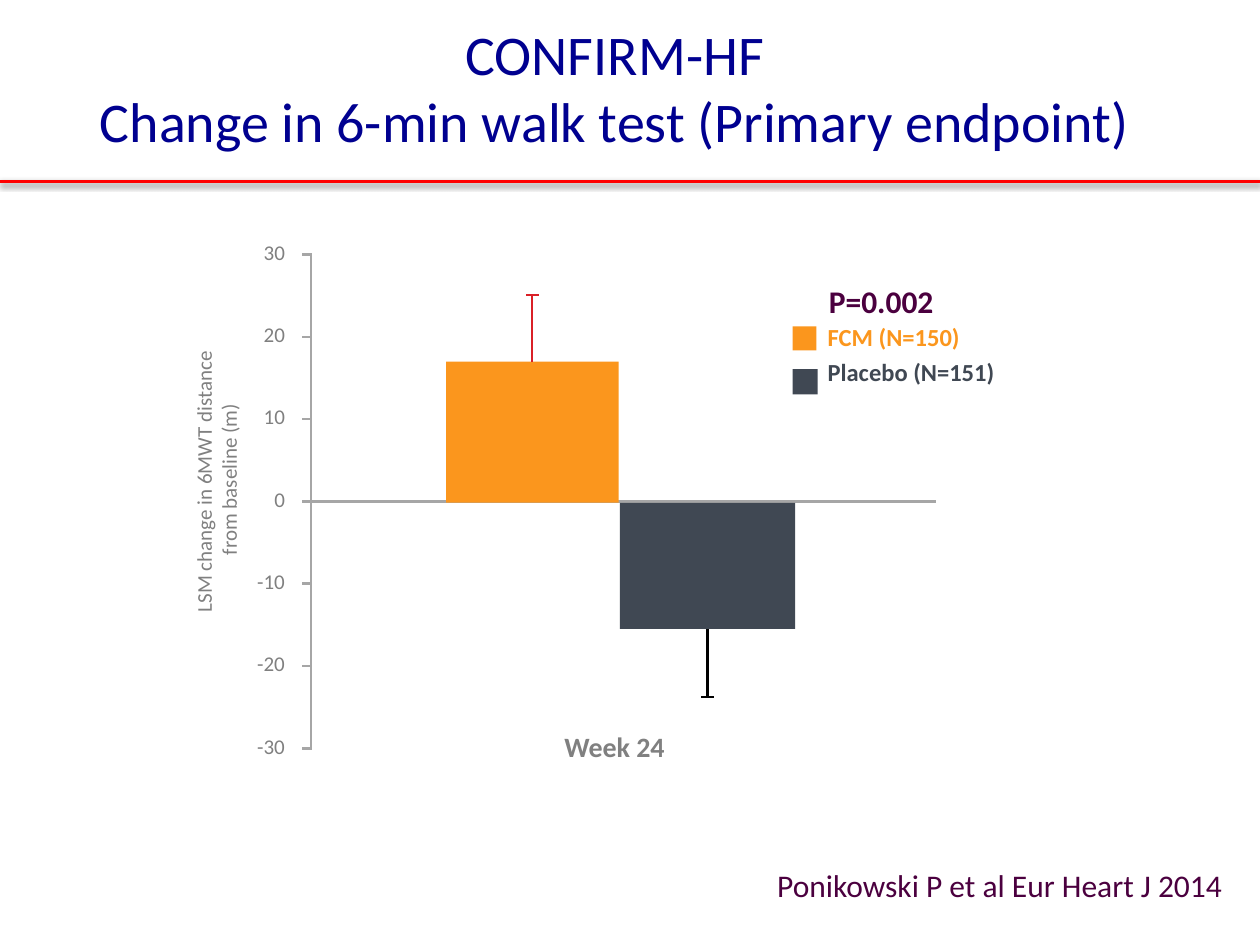
from lxml.etree import SubElement
from pptx import Presentation
from pptx.dml.color import RGBColor
from pptx.enum.shapes import MSO_CONNECTOR as CONNECTOR, MSO_SHAPE as SHAPE
from pptx.enum.text import MSO_ANCHOR as ANCHOR, PP_ALIGN as ALIGN
from pptx.oxml.ns import qn
from pptx.util import Inches, Pt

TITLE = "CONFIRM-HF\vChange in 6-min walk test (Primary endpoint)"
CITATION = " Ponikowski P et al Eur Heart J 2014"
AXIS_TITLE = "LSM change in 6MWT distance\n from baseline (m)"
LEGEND = "FCM (N=150)\nPlacebo (N=151)"
ORANGE, SLATE, GREY, AXIS, PLUM = "FB961D", "404853", "808080", "A6A6A6", "4B003F"
BARS = [
    {"left": 4.92, "width": 1.39, "value": -15.5, "error": -23.8, "fill": SLATE, "line": "000000"},
    {"left": 3.54, "width": 1.37, "value": 17, "error": 25.1, "fill": ORANGE, "line": "DA2027"},
]
SWATCHES = [(6.29, 2.59, 0.19, ORANGE), (6.29, 2.93, 0.2, SLATE)]
TICKS = range(30, -31, -10)
AXIS_X, ZERO_Y, UNIT = 2.47, 3.98, 0.0653


def color(value):
    return RGBColor.from_string(value)


def level(value):
    return ZERO_Y - value * UNIT


def style_text(shape, size, hue, bold=False, align=ALIGN.LEFT, before=0):
    for paragraph in shape.text_frame.paragraphs:
        paragraph.alignment = align
        paragraph.space_before = Pt(before)
        for run in paragraph.runs:
            font = run.font
            font.name, font.size, font.bold = "Calibri", Pt(size), bold
            font.color.rgb = color(hue)


def add_text(slide, text, box, size, hue, wrap=False, **style):
    shape = slide.shapes.add_textbox(*map(Inches, box))
    shape.text_frame.text = text
    shape.text_frame.word_wrap = wrap
    style_text(shape, size, hue, **style)
    return shape


def add_line(slide, start, end, hue, width):
    line = slide.shapes.add_connector(CONNECTOR.STRAIGHT, *map(Inches, start + end))
    line.line.color.rgb = color(hue)
    line.line.width = Pt(width)
    SubElement(line._element.spPr, qn("a:effectLst"))
    return line


def add_block(slide, box, fill):
    block = slide.shapes.add_shape(SHAPE.RECTANGLE, *map(Inches, box))
    block.shadow.inherit = False
    block.fill.solid()
    block.fill.fore_color.rgb = color(fill)
    block.line.fill.background()
    return block


def add_axes(slide):
    add_line(slide, (AXIS_X, 2.01), (AXIS_X, 5.95), AXIS, 1.5)
    for tick in TICKS:
        y = level(tick)
        add_line(slide, (2.4, y), (2.48, y), AXIS, 1.5)
        add_text(slide, str(tick), (1.92, y - 0.17, 0.44, 0.3), 12, GREY, align=ALIGN.RIGHT)
    add_line(slide, (2.46, ZERO_Y), (7.43, ZERO_Y), AXIS, 1.5)
    title = add_text(slide, AXIS_TITLE, (-0.27, 3.57, 3.98, 0.51), 12, GREY, True, align=ALIGN.CENTER)
    title.rotation = 270


def add_bar(slide, bar):
    end, tip = level(bar["value"]), level(bar["error"])
    top, bottom = sorted((ZERO_Y + 0.01, end))
    block = add_block(slide, (bar["left"], top, bar["width"], bottom - top), bar["fill"])
    middle = bar["left"] + bar["width"] / 2
    whisker = add_line(slide, (middle, end), (middle, tip), bar["line"], 1.25)
    whisker.begin_connect(block, 0 if bar["value"] > 0 else 2)
    add_line(slide, (middle - 0.05, tip), (middle + 0.05, tip), bar["line"], 1.25)


def add_title(slide):
    title = slide.shapes.title
    title.left, title.top, title.width, title.height = map(Inches, (0.38, -0.03, 9, 1.44))
    title.text_frame.text = TITLE
    title.text_frame.vertical_anchor = ANCHOR.MIDDLE
    style_text(title, 32, "000090", align=ALIGN.CENTER)


def add_rule(slide):
    rule = add_line(slide, (0, 1.44), (10, 1.44), "FF0000", 2)
    effects = rule._element.spPr.find(qn("a:effectLst"))
    shadow = SubElement(effects, qn("a:outerShdw"), blurRad="40000", dist="20000",
                        dir="5400000", rotWithShape="0")
    black = SubElement(shadow, qn("a:srgbClr"), val="000000")
    SubElement(black, qn("a:alpha"), val="38000")


def main():
    """Build the walk test slide and save it."""
    presentation = Presentation()
    presentation.slide_width, presentation.slide_height = Inches(10), Inches(7.5)
    slide = presentation.slides.add_slide(presentation.slide_layouts[5])
    add_axes(slide)
    for bar in BARS:
        add_bar(slide, bar)
    add_text(slide, "P=0.002", (6.48, 2.19, 1.09, 0.4), 18, PLUM, bold=True)
    add_text(slide, "Week 24", (4.38, 5.74, 1.05, 0.37), 16, GREY, bold=True)
    legend = add_text(slide, LEGEND, (6.47, 2.51, 1.7, 0.61), 14, ORANGE, bold=True, before=3)
    legend.text_frame.paragraphs[1].runs[0].font.color.rgb = color(SLATE)
    for left, top, side, fill in SWATCHES:
        add_block(slide, (left, top, side, side), fill)
    add_title(slide)
    citation = add_text(slide, CITATION, (5.64, 6.82, 4.16, 0.4), 18, PLUM, True, align=ALIGN.RIGHT)
    citation.text_frame.vertical_anchor = ANCHOR.MIDDLE
    add_rule(slide)
    presentation.save("out.pptx")


if __name__ == "__main__":
    main()
